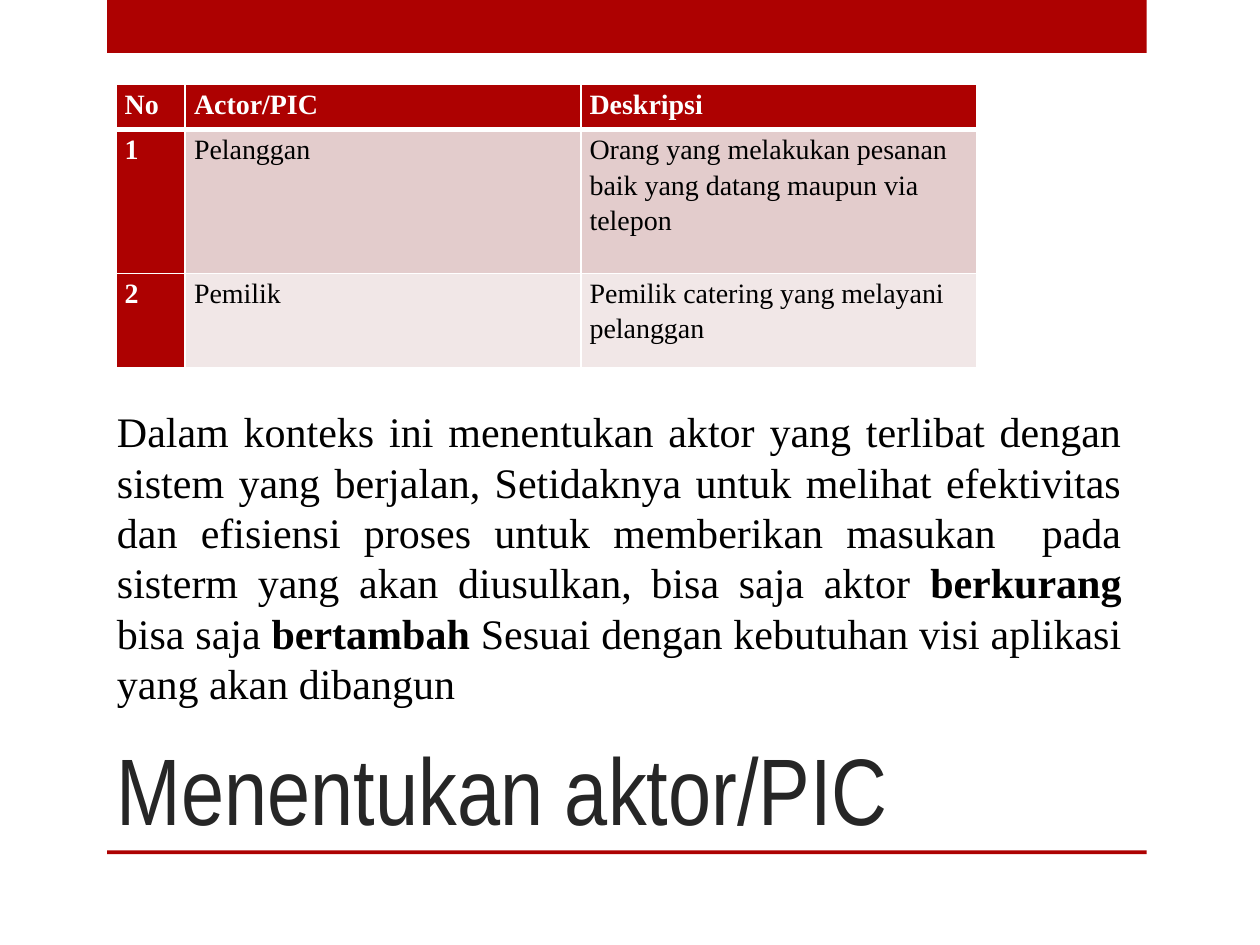
import dataclasses
import typing

import lxml.etree
import pptx
import pptx.dml.color
import pptx.enum.shapes
import pptx.enum.text
import pptx.oxml.ns
import pptx.util

WIDTH, HEIGHT = 10, 7.5
COLOURS = {"red": "AD0101", "white": "FFFFFF", "black": "000000",
           "title": "262626", "dark band": "E3CCCC", "light band": "F1E7E7"}
SERIF, NARROW = "Times New Roman", "Arial Narrow"


@dataclasses.dataclass(frozen=True)
class Area:
    """A rectangle in inches."""
    left: float
    top: float
    width: float
    height: float

    def lengths(self) -> list[int]:
        return [pptx.util.Inches(value) for value in dataclasses.astuple(self)]


@dataclasses.dataclass(frozen=True)
class Style:
    font: str
    size: float
    colour: str
    bold: bool = False


@dataclasses.dataclass(frozen=True)
class Span:
    text: str
    bold: bool = False


BARS = [Area(0.85, 0, 8.25, 0.42), Area(0.85, 6.75, 8.25, 0.03)]
TITLE_AREA = Area(0.83, 5, 7.42, 1.75)
BODY_AREA = Area(0.83, 3.17, 8.17, 2.52)
TABLE_AREA = Area(0.92, 0.67, 6.83, 2.25)
COLUMN_WIDTHS = [0.55, 3.14, 3.14]
ROW_HEIGHTS = [0.36, 1.14, 0.75]
ROW_FILLS = ["red", "dark band", "light band"]
ACTORS = [
    ("No", "Actor/PIC", "Deskripsi"),
    ("1", "Pelanggan", "Orang yang melakukan pesanan baik yang datang maupun via telepon"),
    ("2", "Pemilik", "Pemilik catering yang melayani pelanggan"),
]
BODY = [
    Span("Dalam konteks ini menentukan aktor yang terlibat dengan sistem yang berjalan, "
         "Setidaknya untuk melihat efektivitas dan efisiensi proses untuk memberikan "
         "masukan  pada sisterm yang akan diusulkan, bisa saja aktor "),
    Span("berkurang ", True),
    Span("bisa saja "),
    Span("bertambah ", True),
    Span("Sesuai dengan kebutuhan visi aplikasi yang akan dibangun "),
]


def rgb(name: str) -> pptx.dml.color.RGBColor:
    return pptx.dml.color.RGBColor.from_string(COLOURS[name])


def format_run(run: typing.Any, style: Style) -> None:
    run.font.name = style.font
    run.font.size = pptx.util.Pt(style.size)
    run.font.bold = style.bold
    run.font.color.rgb = rgb(style.colour)


def add_bar(page: typing.Any, area: Area) -> None:
    bar = page.shapes.add_shape(pptx.enum.shapes.MSO_SHAPE.RECTANGLE, *area.lengths())
    bar.shadow.inherit = False
    bar.fill.solid()
    bar.fill.fore_color.rgb = rgb("red")
    bar.line.fill.background()


def add_text(page: typing.Any, area: Area, spans: list[Span], style: Style) -> typing.Any:
    box = page.shapes.add_textbox(*area.lengths())
    box.text_frame.word_wrap = True
    for span in spans:
        run = box.text_frame.paragraphs[0].add_run()
        run.text = span.text
        format_run(run, dataclasses.replace(style, bold=span.bold))
    return box


def set_borders(cell: typing.Any, bottom: float) -> None:
    """Draw white cell borders; they must stand before the fill."""
    properties = cell._tc.get_or_add_tcPr()
    widths = {"lnL": 1, "lnR": 1, "lnT": 1, "lnB": bottom}
    for position, (side, width) in enumerate(widths.items()):
        line = lxml.etree.Element(pptx.oxml.ns.qn(f"a:{side}"), w=str(pptx.util.Pt(width)))
        fill = lxml.etree.SubElement(line, pptx.oxml.ns.qn("a:solidFill"))
        lxml.etree.SubElement(fill, pptx.oxml.ns.qn("a:srgbClr"), val=COLOURS["white"])
        properties.insert(position, line)


def fill_cell(cell: typing.Any, text: str, fill: str, heading: bool, bottom: float) -> None:
    cell.margin_left = cell.margin_right = pptx.util.Inches(0.07)
    cell.margin_top = cell.margin_bottom = 0
    cell.fill.solid()
    cell.fill.fore_color.rgb = rgb(fill)
    set_borders(cell, bottom)
    cell.text_frame.text = text
    para = cell.text_frame.paragraphs[0]
    para.line_spacing = 1.15
    format_run(para.runs[0], Style(SERIF, 16, "white" if heading else "black", heading))


def add_actor_table(page: typing.Any) -> None:
    table = page.shapes.add_table(len(ACTORS), len(COLUMN_WIDTHS), *TABLE_AREA.lengths()).table
    for column, width in zip(table.columns, COLUMN_WIDTHS):
        column.width = pptx.util.Inches(width)
    for row, height in zip(table.rows, ROW_HEIGHTS):
        row.height = pptx.util.Inches(height)
    for row_index, texts in enumerate(ACTORS):
        for column_index, text in enumerate(texts):
            heading = row_index == 0 or column_index == 0
            fill_cell(table.cell(row_index, column_index), text,
                      "red" if heading else ROW_FILLS[row_index], heading,
                      bottom=3 if row_index == 0 else 1)


def main() -> None:
    deck = pptx.Presentation()
    deck.slide_width = pptx.util.Inches(WIDTH)
    deck.slide_height = pptx.util.Inches(HEIGHT)
    page = deck.slides.add_slide(deck.slide_layouts[6])

    # Frame of the slide
    for area in BARS:
        add_bar(page, area)

    # Title, standing on the lower bar
    title = add_text(page, TITLE_AREA, [Span("Menentukan aktor/PIC")],
                     Style(NARROW, 54, "title"))
    title.text_frame.vertical_anchor = pptx.enum.text.MSO_ANCHOR.BOTTOM

    # Actors and their explanation
    add_actor_table(page)
    body = add_text(page, BODY_AREA, BODY, Style(SERIF, 24, "black"))
    body.text_frame.auto_size = pptx.enum.text.MSO_AUTO_SIZE.SHAPE_TO_FIT_TEXT
    body.text_frame.paragraphs[0].alignment = pptx.enum.text.PP_ALIGN.JUSTIFY

    deck.save("out.pptx")


if __name__ == "__main__":
    main()
